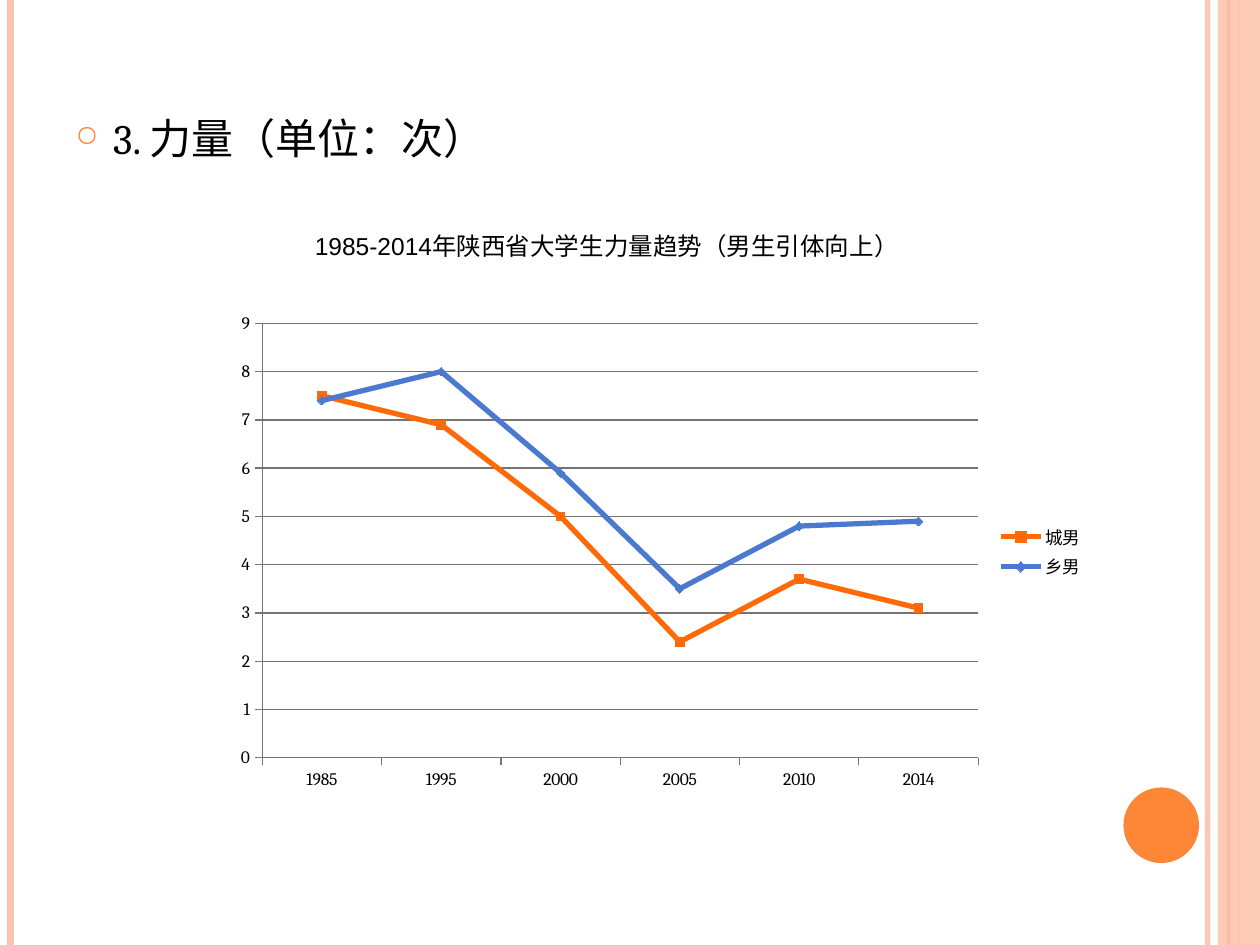
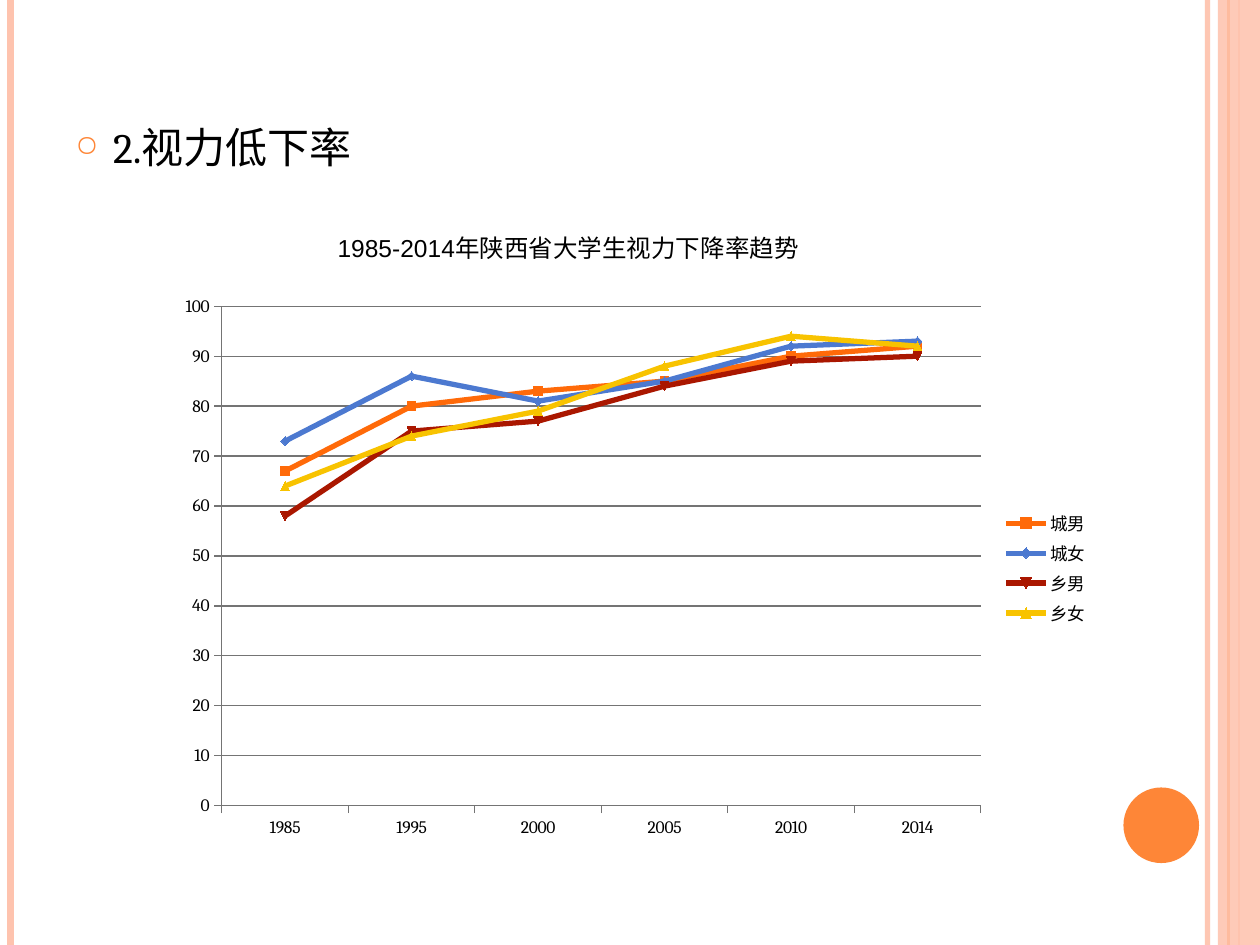
"""Build two slides charting strength and poor eyesight among Shaanxi students."""
from lxml import etree
from pptx import Presentation
from pptx.chart.data import CategoryChartData
from pptx.dml.color import RGBColor
from pptx.enum.chart import XL_CHART_TYPE, XL_LEGEND_POSITION, XL_TICK_MARK
from pptx.enum.shapes import MSO_CONNECTOR, MSO_SHAPE
from pptx.oxml import parse_xml
from pptx.oxml.ns import nsdecls, qn
from pptx.util import Pt

STRAIGHT = MSO_CONNECTOR.STRAIGHT
RECTANGLE, OVAL = MSO_SHAPE.RECTANGLE, MSO_SHAPE.OVAL
LINE_MARKERS = XL_CHART_TYPE.LINE_MARKERS
LEGEND_RIGHT = XL_LEGEND_POSITION.RIGHT
TICK_OUT, TICK_NONE = XL_TICK_MARK.OUTSIDE, XL_TICK_MARK.NONE

BLACK = RGBColor(0x00, 0x00, 0x00)
GREY = RGBColor(0x74, 0x74, 0x74)
PEACH = RGBColor(0xFE, 0xC3, 0xAE)
ORANGE = RGBColor(0xFE, 0x86, 0x37)
VIVID_ORANGE = RGBColor(0xFF, 0x6A, 0x09)
BLUE = RGBColor(0x4C, 0x79, 0xD0)
RED = RGBColor(0xAA, 0x17, 0x00)
YELLOW = RGBColor(0xF8, 0xC3, 0x00)

HEADING_FONT, CAPTION_FONT = "Cambria", "Arial"
SLIDE_WIDTH, SLIDE_HEIGHT = 720, 540
HEADING_LEFT, HEADING_WIDTH, HEADING_BOTTOM = 36, 588, 510

YEARS = ["1985", "1995", "2000", "2005", "2010", "2014"]
TRENDS = [
    {
        "heading": "3. 力量（单位：次）",
        "heading_top": 60.5,
        "caption": "1985-2014年陕西省大学生力量趋势（男生引体向上）",
        "caption_box": (172.8, 128.2, 380, 24.5),
        "chart_box": (127.4, 173.5, 499, 283.7),
        "plot": {"x": 0.045, "y": 0.04, "w": 0.82, "h": 0.875},
        "scale": (9, 1),
        "groups": [
            ("城男", VIVID_ORANGE, [7.5, 6.9, 5, 2.4, 3.7, 3.1]),
            ("乡男", BLUE, [7.4, 8, 5.9, 3.5, 4.8, 4.9]),
        ],
    },
    {
        "heading": "2.视力低下率",
        "heading_top": 66.2,
        "caption": "1985-2014年陕西省大学生视力下降率趋势",
        "caption_box": (185.8, 129.6, 317.5, 24.5),
        "chart_box": (95.8, 163.4, 533.5, 322.6),
        "plot": {"x": 0.058, "y": 0.036, "w": 0.813, "h": 0.885},
        "scale": (100, 10),
        "groups": [
            ("城男", VIVID_ORANGE, [67, 80, 83, 85, 90, 92]),
            ("城女", BLUE, [73, 86, 81, 85, 92, 93]),
            ("乡男", RED, [58, 75, 77, 84, 89, 90]),
            ("乡女", YELLOW, [64, 74, 79, 88, 94, 92]),
        ],
    },
]


def points(box):
    return [Pt(length) for length in box]


def set_font(font, name, size):
    font.name, font.size, font.color.rgb = name, Pt(size), BLACK


def set_opacity(element, percent):
    color = next(element.iter(qn("a:srgbClr")))
    etree.SubElement(color, qn("a:alpha")).set("val", str(percent * 1000))


def add_stripe(slide, x, color, width):
    stripe = slide.shapes.add_connector(STRAIGHT, *points((x, 0, x, SLIDE_HEIGHT)))
    stripe.line.color.rgb = color
    stripe.line.width = Pt(width)
    properties = stripe.line._get_or_add_ln().getparent()
    etree.SubElement(properties, qn("a:effectLst"))
    return stripe


def add_solid(slide, kind, box, color):
    solid = slide.shapes.add_shape(kind, *points(box))
    solid.shadow.inherit = False
    solid.fill.solid()
    solid.fill.fore_color.rgb = color
    solid.line.fill.background()
    return solid


def add_frame(slide):
    inner_stripe = add_stripe(slide, 690, PEACH, 3)
    set_opacity(inner_stripe.line._get_or_add_ln(), 93)
    add_stripe(slide, 6, PEACH, 4.5)
    add_stripe(slide, 702, ORANGE, 1.5)
    band = add_solid(slide, RECTANGLE, (696, 0, 24, SLIDE_HEIGHT), PEACH)
    set_opacity(band.fill._xPr, 87)
    add_stripe(slide, 708, PEACH, 0.75)
    add_solid(slide, OVAL, (642, 450, 43.2, 43.2), ORANGE)


def add_text(slide, box, text):
    frame = slide.shapes.add_textbox(*points(box)).text_frame
    frame.word_wrap = True
    frame.text = text
    return frame.paragraphs[0]


def add_heading(slide, text, top):
    box = (HEADING_LEFT, top, HEADING_WIDTH, HEADING_BOTTOM - top)
    heading = add_text(slide, box, text)
    properties = heading._p.get_or_add_pPr()
    properties.set("marL", str(Pt(21.6)))
    properties.set("indent", str(Pt(-21.6)))
    for bullet in (
        f'<a:buClr {nsdecls("a")}><a:srgbClr val="{ORANGE}"/></a:buClr>',
        f'<a:buSzPct {nsdecls("a")} val="70000"/>',
        f'<a:buChar {nsdecls("a")} char="○"/>',
    ):
        properties.append(parse_xml(bullet))
    set_font(heading.runs[0].font, HEADING_FONT, 24)


def place_plot(chart, plot):
    plot_area = chart._chartSpace.chart.plotArea
    for old_layout in plot_area.findall(qn("c:layout")):
        plot_area.remove(old_layout)
    sizes = "".join(f'<c:{side} val="{share}"/>' for side, share in plot.items())
    plot_area.insert(0, parse_xml(
        f'<c:layout {nsdecls("c")}><c:manualLayout><c:layoutTarget val="inner"/>'
        f'<c:xMode val="edge"/><c:yMode val="edge"/>{sizes}'
        "</c:manualLayout></c:layout>"))


def add_trend_chart(slide, trend):
    data = CategoryChartData()
    data.categories = YEARS
    for name, _, values in trend["groups"]:
        data.add_series(name, values)
    chart = slide.shapes.add_chart(
        LINE_MARKERS, *points(trend["chart_box"]), data).chart
    chart.has_title = False
    set_font(chart.font, HEADING_FONT, 10)
    chart.has_legend = True
    chart.legend.position = LEGEND_RIGHT
    chart.legend.include_in_layout = False
    set_font(chart.legend.font, HEADING_FONT, 10)
    place_plot(chart, trend["plot"])

    chart.plots[0].vary_by_categories = False
    for series, (_, color, _) in zip(chart.plots[0].series, trend["groups"]):
        series.smooth = False
        series.format.line.color.rgb = color
        series.format.line.width = Pt(3)
        series.marker.size = 5
        marker = series.marker.format
        marker.fill.solid()
        marker.fill.fore_color.rgb = color
        marker.line.color.rgb = color

    years, scale = chart.category_axis, chart.value_axis
    for axis in (years, scale):
        axis.major_tick_mark, axis.minor_tick_mark = TICK_OUT, TICK_NONE
        axis.format.line.color.rgb = GREY
        axis.format.line.width = Pt(0.75)
        set_font(axis.tick_labels.font, HEADING_FONT, 10)
    scale.minimum_scale = 0
    scale.maximum_scale, scale.major_unit = trend["scale"]
    scale.tick_labels.number_format = "General"
    scale.tick_labels.number_format_is_linked = False
    scale.has_major_gridlines = True
    scale.major_gridlines.format.line.color.rgb = GREY
    scale.major_gridlines.format.line.width = Pt(0.75)


def main():
    deck = Presentation()
    deck.slide_width, deck.slide_height = Pt(SLIDE_WIDTH), Pt(SLIDE_HEIGHT)
    for trend in TRENDS:
        slide = deck.slides.add_slide(deck.slide_layouts[6])
        add_frame(slide)
        add_heading(slide, trend["heading"], trend["heading_top"])
        add_trend_chart(slide, trend)
        caption = add_text(slide, trend["caption_box"], trend["caption"])
        set_font(caption.runs[0].font, CAPTION_FONT, 14)
    deck.save("out.pptx")


if __name__ == "__main__":
    main()
